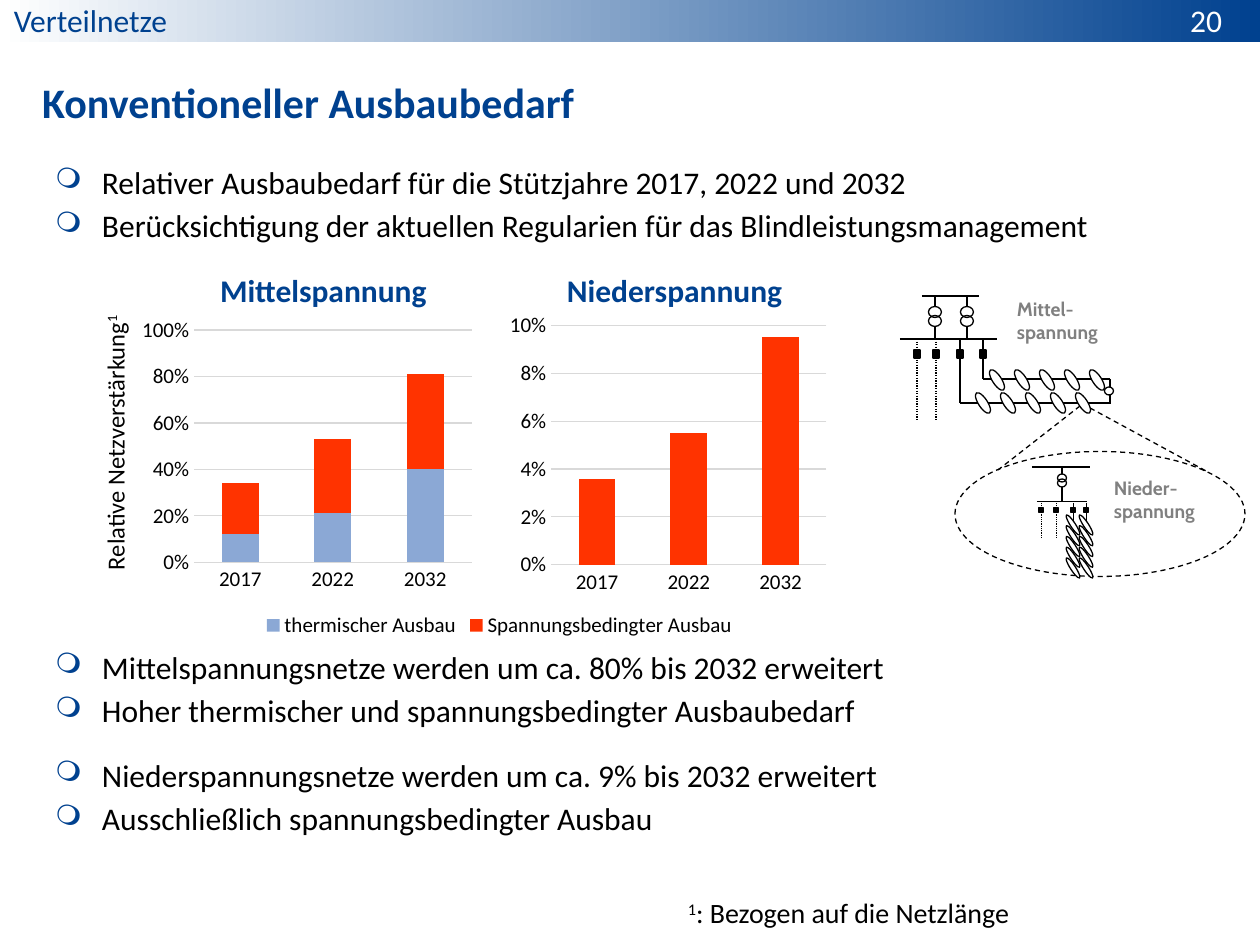
from lxml import etree
from pptx import Presentation, util as u
from pptx.chart.data import CategoryChartData
from pptx.dml.color import RGBColor
from pptx.enum import chart as ch, dml, shapes, text
from pptx.oxml import parse_xml
from pptx.oxml.ns import nsdecls, qn

BLUE, BLACK, WHITE, GREY, RULE = "00418F", "000000", "FFFFFF", "808080", "D9D9D9"
SOLID, DOT, DASH = None, dml.MSO_LINE.ROUND_DOT, dml.MSO_LINE.DASH
MID = text.MSO_ANCHOR.MIDDLE
LEFT, RIGHT = text.PP_ALIGN.LEFT, text.PP_ALIGN.RIGHT

TITLE = "Konventioneller Ausbaubedarf"
BULLETS = [  # top, lines
    (163, ["Relativer Ausbaubedarf für die Stützjahre 2017, 2022 und 2032",
           "Berücksichtigung der aktuellen Regularien für das Blindleistungsmanagement"]),
    (648, ["Mittelspannungsnetze werden um ca. 80% bis 2032 erweitert",
           "Hoher thermischer und spannungsbedingter Ausbaubedarf"]),
    (756, ["Niederspannungsnetze werden um ca. 9% bis 2032 erweitert",
           "Ausschließlich spannungsbedingter Ausbau"]),
]
YEARS = ["2017", "2022", "2032"]
SERIES = [("thermischer Ausbau", "8BA8D5"), ("Spannungsbedingter Ausbau", "FF3300")]
CHARTS = [  # box, inner plot as shares, values per series, axis top, step, legend
    ((141, 265, 717, 378), (0.074, 0.172, 0.387, 0.615),
     [(0.12, 0.21, 0.4), (0.22, 0.32, 0.41)], 1, 0.2, True),
    ((498, 273, 348, 378), (0.153, 0.139, 0.791, 0.633),
     [(0, 0, 0), (0.036, 0.055, 0.095)], 0.1, 0.02, False),
]
HEADS = [((207, 265, 234, 50), "Mittelspannung"), ((554, 265, 242, 50), "Niederspannung")]
TAGS = [((1004, 291, 137, 59), ("Mittel-", "spannung")),
        ((1101, 470, 137, 59), ("Nieder-", "spannung"))]

# Grid diagram
WIRES = [  # width, dash, lines as x1, y1, x2, y2
    (1.5, SOLID, [(900, 339, 997, 339), (922, 296, 979, 296), (1032, 467, 1090, 467)]),
    (0.75, SOLID, [(983, 339, 983, 379), (983, 379, 1110, 379), (1110, 379, 1110, 402),
                   (960, 339, 960, 403), (960, 403, 1111, 403)]),
    (0.75, DOT, [(x, 339, x, 421) for x in (917, 936)]),
    (0.75, DASH, [(1090, 408, 1206, 471), (1080, 406, 998, 470)]),
    (0.5, SOLID, [(1037, 501, 1087, 501), (1073, 503, 1073, 566), (1086, 503, 1086, 566)]),
    (0.5, DOT, [(x, 503, x, 538) for x in (1041, 1056)]),
]
TRAFOS = [  # x, top bar, upper and lower ring centre, bottom bar, ring width and height
    (935, 296, 312, 321, 339, 13, 11),
    (967, 296, 312, 321, 339, 13, 11),
    (1062, 467, 478, 483, 501, 9, 8),
]
SWITCHES = [((917, 936, 960, 983), 354, 6, 8), ((1041, 1056, 1073, 1086), 510, 4, 5)]
LOADS = [  # first centre, width, way to the last centre
    ((997, 380), 9, (100, 0)), ((983, 403), 9, (100, 0)),
    ((1086, 525), 5, (0, 43)), ((1073, 525), 5, (0, 43)),
]
COUNT, TILT = 5, 326.8


def px(n):
    return u.Emu(round(n * 914400 / 126))


def area(box):
    return [px(n) for n in box]


def rgb(tone):
    return RGBColor.from_string(tone)


def style(font, size, tone=BLACK, bold=False, face="Calibri"):
    font.size, font.bold, font.name = u.Pt(size), bold, face
    font.color.rgb = rgb(tone)


def add_run(para, words, *look, sup=False, **more):
    run = para.add_run()
    run.text = words
    style(run.font, *look, **more)
    if sup:
        run.font._element.set("baseline", "30000")


def add_box(host, box, pad=(13, 6, 13, 6), wrap=True, anchor=text.MSO_ANCHOR.TOP):
    shape = host.add_textbox(*area(box))
    frame = shape.text_frame
    frame.word_wrap, frame.vertical_anchor = wrap, anchor
    (frame.margin_left, frame.margin_top,
     frame.margin_right, frame.margin_bottom) = area(pad)
    return shape, frame.paragraphs[0]


def add_list(host, top, lines):
    shape, para = add_box(host, (42, top, 1181, 90), (13, 0, 13, 0))
    for i, words in enumerate(lines):
        if i:
            para = shape.text_frame.add_paragraph()
            para.space_before = u.Pt(3.2)
        props = para._p.get_or_add_pPr()
        props.set("marL", str(px(47)))
        props.set("indent", str(-px(47)))
        tone = etree.SubElement(props, qn("a:buClr"))
        etree.SubElement(tone, qn("a:srgbClr"), val=BLUE)
        etree.SubElement(props, qn("a:buSzPct"), val="90000")
        etree.SubElement(props, qn("a:buChar"), char="❍")
        add_run(para, words, 18)


def add_bars(host, box, plot, rows, top, step, legend):
    data = CategoryChartData(number_format="0%")
    data.categories = YEARS
    for (name, _), vals in zip(SERIES, rows):
        data.add_series(name, vals)
    chart = host.add_chart(ch.XL_CHART_TYPE.COLUMN_STACKED, *area(box), data).chart
    style(chart.font, 12)
    chart.has_title, chart.has_legend = False, legend
    if legend:
        chart.legend.position = ch.XL_LEGEND_POSITION.BOTTOM
        chart.legend.include_in_layout = False
        style(chart.legend.font, 12)
    bars = chart.plots[0]
    bars.gap_width, bars.overlap, bars.vary_by_categories = 150, 100, False
    for ser, (_, tone) in zip(bars.series, SERIES):
        ser.format.fill.solid()
        ser.format.fill.fore_color.rgb = rgb(tone)
    cat, val = chart.category_axis, chart.value_axis
    for axis in (cat, val):
        axis.major_tick_mark = axis.minor_tick_mark = ch.XL_TICK_MARK.NONE
        style(axis.tick_labels.font, 12)
    val.minimum_scale, val.maximum_scale, val.major_unit = 0, top, step
    val.tick_labels.number_format, val.tick_labels.number_format_is_linked = "0%", False
    val.format.line.fill.background()
    for line in (cat.format.line, val.major_gridlines.format.line):
        line.color.rgb, line.width = rgb(RULE), u.Pt(0.75)
    place = "".join(f'<c:{key} val="{n}"/>' for key, n in zip("xywh", plot))
    modes = '<c:layoutTarget val="inner"/><c:xMode val="edge"/><c:yMode val="edge"/>'
    layout = parse_xml(f'<c:layout {nsdecls("c")}><c:manualLayout>{modes}{place}'
                       '</c:manualLayout></c:layout>')
    room = chart._chartSpace.chart.plotArea
    for old in room.findall(qn("c:layout")):
        room.remove(old)
    room.insert(0, layout)


def add_wire(host, ends, width, dash=SOLID):
    wire = host.add_connector(shapes.MSO_CONNECTOR.STRAIGHT, *area(ends))
    wire.line.color.rgb, wire.line.width = rgb(BLACK), u.Pt(width)
    if dash:
        wire.line.dash_style = dash
    etree.SubElement(wire._element.spPr, qn("a:effectLst"))


def add_mark(host, kind, mid, size, fill=WHITE, width=0, dash=SOLID, turn=0):
    """Adds a preset shape around its centre."""
    (x, y), (w, h) = mid, size
    mark = host.add_shape(kind, *area((x - w / 2, y - h / 2, w, h)))
    mark.shadow.inherit, mark.rotation = False, turn
    if fill:
        mark.fill.solid()
        mark.fill.fore_color.rgb = rgb(fill)
    else:
        mark.fill.background()
    mark.line.color.rgb, mark.line.width = rgb(BLACK), u.Pt(width)
    if dash:
        mark.line.dash_style = dash


def add_net(host):
    oval, rect = shapes.MSO_SHAPE.OVAL, shapes.MSO_SHAPE.RECTANGLE
    for width, dash, lines in WIRES:
        for ends in lines:
            add_wire(host, ends, width, dash)
    for x, top, high, low, base, w, h in TRAFOS:
        add_wire(host, (x, top, x, high - h // 2), 0.75)
        add_wire(host, (x, low + h // 2, x, base), 0.75)
        add_mark(host, oval, (x, high), (w, h))
        add_mark(host, oval, (x, low), (w, h), None)
    for spots, y, w, h in SWITCHES:
        for x in spots:
            add_mark(host, rect, (x, y), (w, h), BLACK)
    add_mark(host, oval, (1109, 391), (9, 8), width=0.75)
    add_mark(host, oval, (1100, 514), (290, 125), None, 0.75, DASH)
    for (x, y), w, (dx, dy) in LOADS:
        for i in range(COUNT):
            part = i / (COUNT - 1)
            add_mark(host, oval, (x + dx * part, y + dy * part), (w, 24), width=0.75, turn=TILT)
    for box, (first, last) in TAGS:
        para = add_box(host, box)[1]
        add_run(para, first, 11, GREY, True, face="Cabin")
        para.add_line_break()
        add_run(para, last, 11, GREY, True, face="Cabin")


def main():
    deck = Presentation()
    deck.slide_width, deck.slide_height = px(1260), px(945)
    slide = deck.slides.add_slide(deck.slide_layouts[5])
    host = slide.shapes

    title = host.title
    title.left, title.top, title.width, title.height = area((42, 63, 1181, 78))
    frame = title.text_frame
    frame.margin_left = frame.margin_top = frame.margin_right = frame.margin_bottom = 0
    frame.vertical_anchor, frame.paragraphs[0].alignment = MID, LEFT
    add_run(frame.paragraphs[0], TITLE, 24, BLUE, True)

    bar = host.add_shape(shapes.MSO_SHAPE.RECTANGLE, *area((0, 0, 1260, 42)))
    bar.shadow.inherit = False
    bar.line.fill.background()
    bar.fill.gradient()
    bar.fill.gradient_angle = 0
    for stop, tone, spot in zip(bar.fill.gradient_stops, (WHITE, BLUE), (0, 1)):
        stop.color.rgb, stop.position = rgb(tone), spot
    add_run(add_box(host, (14, 0, 476, 40), (0, 0, 13, 0), anchor=MID)[1],
            "Verteilnetze", 18, BLUE)
    page = add_box(host, (929, 0, 293, 40), (13, 0, 0, 0), anchor=MID)[1]
    page.alignment = RIGHT
    add_run(page, "20", 18, WHITE)

    for top, lines in BULLETS:
        add_list(host, top, lines)
    for item in CHARTS:
        add_bars(host, *item)
    add_net(host.add_group_shape().shapes)

    label, para = add_box(host, (-29, 417, 289, 43), wrap=False)
    label.rotation = 270
    add_run(para, "Relative Netzverstärkung", 14)
    add_run(para, "1", 14, sup=True)
    note = add_box(host, (675, 890, 352, 47), wrap=False)[1]
    add_run(note, "1", 16, sup=True)
    add_run(note, ": Bezogen auf die Netzlänge", 16)
    for box, words in HEADS:
        add_run(add_box(host, box, wrap=False)[1], words, 18, BLUE, True)
    deck.save("out.pptx")


if __name__ == "__main__":
    main()
